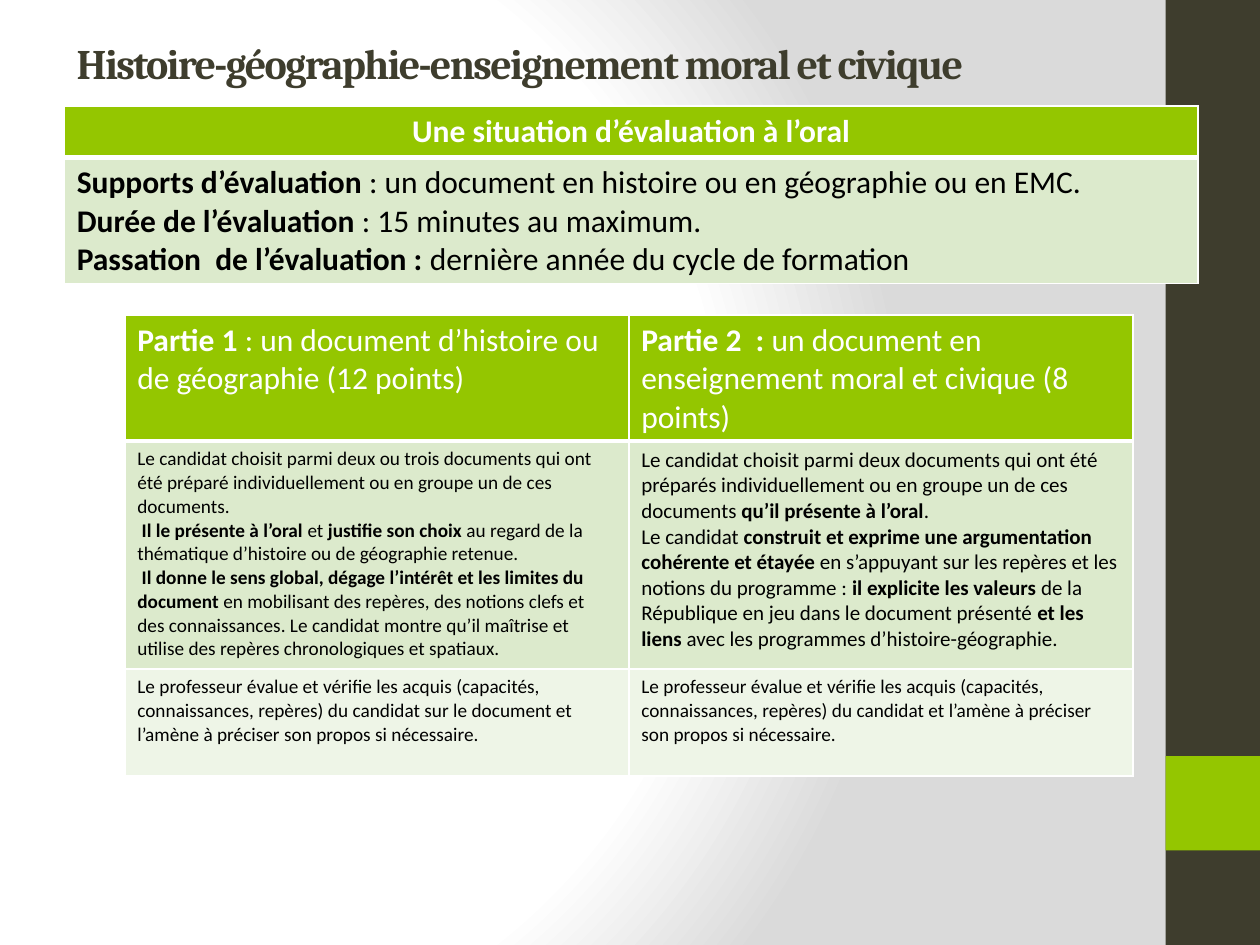
from dataclasses import dataclass

from pptx import Presentation
from pptx.dml.color import RGBColor
from pptx.enum.shapes import MSO_SHAPE
from pptx.enum.text import MSO_ANCHOR, PP_ALIGN
from pptx.oxml import parse_xml
from pptx.oxml.ns import nsdecls
from pptx.util import Inches, Pt

RECT = MSO_SHAPE.RECTANGLE
MIDDLE = MSO_ANCHOR.MIDDLE
LEFT, CENTER = PP_ALIGN.LEFT, PP_ALIGN.CENTER


@dataclass(frozen=True)
class Theme:
    dark: str = "3E3D2D"
    green: str = "94C600"
    band: str = "DCEACC"
    pale: str = "EEF5E7"
    white: str = "FFFFFF"
    black: str = "000000"
    grey: str = "DADADA"
    heading_font: str = "Cambria"
    body_font: str = "Calibri"
    title: int = 24
    large: int = 18
    medium: int = 12
    small: int = 11
    thin: int = 1
    thick: int = 3


THEME = Theme()

SUMMARY = [
    "**Supports d’évaluation **: un document en histoire ou en géographie ou en EMC.",
    "**Durée de l’évaluation **: 15 minutes au maximum.",
    "**Passation  de l’évaluation : **dernière année du cycle de formation",
]
PART_TITLES = [
    ["**Partie 1 **: un document d’histoire ou de géographie (12 points)"],
    ["**Partie 2  : **un document en enseignement moral et civique (8 points)"],
]
PART_TASKS = [
    [
        "Le candidat choisit parmi deux ou trois documents qui ont été préparé "
        "individuellement ou en groupe un de ces documents.",
        "** Il le présente à l’oral **et **justifie son choix **au regard de la "
        "thématique d’histoire ou de géographie retenue.",
        "** Il donne le sens global, dégage l’intérêt et les limites du document **"
        "en mobilisant des repères, des notions clefs et des connaissances. Le candidat "
        "montre qu’il maîtrise et utilise des repères chronologiques et spatiaux.",
    ],
    [
        "Le candidat choisit parmi deux documents qui ont été préparés individuellement "
        "ou en groupe un de ces documents **qu’il présente à l’oral**.",
        "Le candidat **construit et exprime une argumentation cohérente et étayée **"
        "en s’appuyant sur les repères et les notions du programme : "
        "**il explicite les valeurs **de la République en jeu dans le document présenté "
        "**et les liens **avec les programmes d’histoire-géographie.",
    ],
]
PART_REVIEWS = [
    ["Le professeur évalue et vérifie les acquis (capacités, connaissances, repères) du "
     "candidat sur le document et l’amène à préciser son propos si nécessaire."],
    ["Le professeur évalue et vérifie les acquis (capacités, connaissances, repères) du "
     "candidat et l’amène à préciser son propos si nécessaire."],
]


def set_background(slide):
    stops = "".join(
        f'<a:gs pos="{pos}000"><a:srgbClr val="{color}"/></a:gs>'
        for pos, color in ((0, THEME.white), (75, THEME.white), (100, THEME.grey))
    )
    bg = parse_xml(
        f'<p:bg {nsdecls("p", "a")}><p:bgPr><a:gradFill rotWithShape="1">'
        f'<a:gsLst>{stops}</a:gsLst><a:path path="circle">'
        '<a:fillToRect l="20000" t="50000" r="100000" b="50000"/></a:path>'
        "</a:gradFill><a:effectLst/></p:bgPr></p:bg>"
    )
    slide.element.cSld.insert(0, bg)


def add_block(slide, left, top, width, height, color):
    sp = slide.shapes.add_shape(
        RECT, Inches(left), Inches(top), Inches(width), Inches(height))
    sp.shadow.inherit = False
    sp.fill.solid()
    sp.fill.fore_color.rgb = RGBColor.from_string(color)
    sp.line.fill.background()


def add_run(p, text, font, size, color, bold):
    r = p.add_run()
    r.text = text
    r.font.name = font
    r.font.size = Pt(size)
    r.font.bold = bold
    r.font.color.rgb = RGBColor.from_string(color)
    return r


def add_title(slide, text):
    box = slide.shapes.add_textbox(Inches(0.51), Inches(0), Inches(9), Inches(0.99))
    tf = box.text_frame
    tf.word_wrap = True
    tf.vertical_anchor = MIDDLE
    r = add_run(tf.paragraphs[0], text, THEME.heading_font, THEME.title, THEME.dark, True)
    r.font._element.set("spc", "-100")


def set_borders(cell, bottom):
    tc_pr = cell._tc.get_or_add_tcPr()
    widths = {"L": THEME.thin, "R": THEME.thin, "T": THEME.thin, "B": bottom}
    for i, (side, width) in enumerate(widths.items()):
        tc_pr.insert(i, parse_xml(
            f'<a:ln{side} {nsdecls("a")} w="{Pt(width)}"><a:solidFill>'
            f'<a:srgbClr val="{THEME.white}"/></a:solidFill></a:ln{side}>'))


def fill_cell(cell, lines, size, fill, header, align):
    cell.fill.solid()
    cell.fill.fore_color.rgb = RGBColor.from_string(fill)
    set_borders(cell, THEME.thick if header else THEME.thin)
    color = THEME.white if header else THEME.black
    tf = cell.text_frame
    for i, line in enumerate(lines):
        p = tf.add_paragraph() if i else tf.paragraphs[0]
        p.alignment = align
        for j, text in enumerate(line.split("**")):
            if text:
                add_run(p, text, THEME.body_font, size, color, j % 2 == 1)


def add_table(slide, left, top, width, heights, rows, sizes, header_align=LEFT):
    table = slide.shapes.add_table(
        len(rows), len(rows[0]), Inches(left), Inches(top),
        Inches(width), Inches(sum(heights))).table
    fills = (THEME.green, THEME.band, THEME.pale)
    for i, cells in enumerate(rows):
        table.rows[i].height = Inches(heights[i])
        for j, lines in enumerate(cells):
            fill_cell(table.cell(i, j), lines, sizes[i][j], fills[i], i == 0,
                      header_align if i == 0 else LEFT)


def main():
    prs = Presentation()
    prs.slide_width, prs.slide_height = Inches(10), Inches(7.5)
    slide = prs.slides.add_slide(prs.slide_layouts[6])
    set_background(slide)
    add_block(slide, 9.25, 0, 0.75, 7.5, THEME.dark)
    add_block(slide, 9.25, 6, 0.75, 0.75, THEME.green)
    add_title(slide, "Histoire-géographie-enseignement moral et civique")
    add_table(slide, 0.51, 0.84, 9, [0.41, 1],
              [[["**Une situation d’évaluation à l’oral**"]], [SUMMARY]],
              [[THEME.large], [THEME.large]], CENTER)
    add_table(slide, 0.99, 2.5, 8, [1, 1.81, 0.85],
              [PART_TITLES, PART_TASKS, PART_REVIEWS],
              [[THEME.large] * 2, [THEME.small, THEME.medium], [THEME.small] * 2])
    prs.save("out.pptx")


if __name__ == "__main__":
    main()
